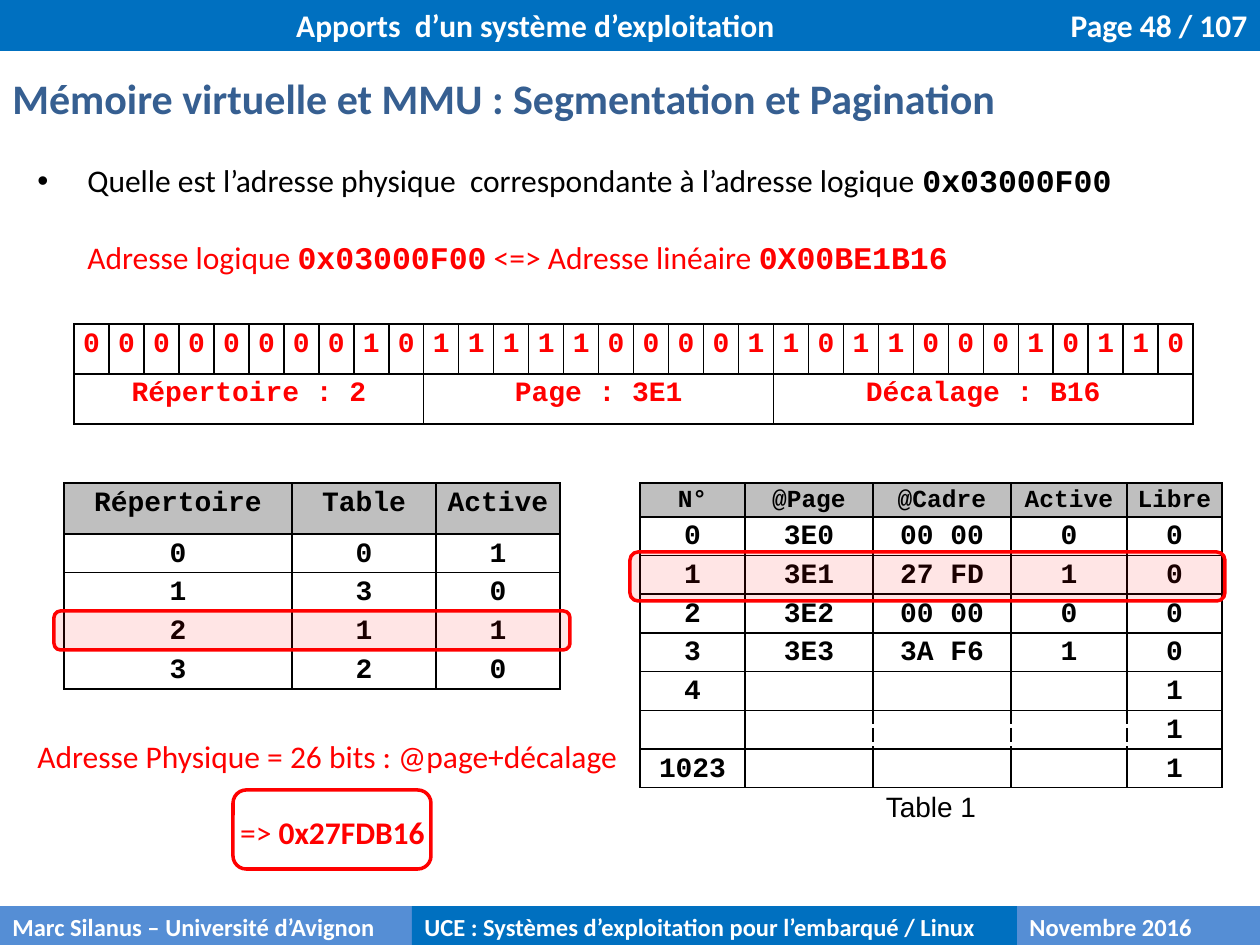
"""Build the slide on virtual memory, segmentation and paging."""
from lxml import etree
from pptx import Presentation
from pptx import util as u
from pptx.dml.color import RGBColor
from pptx.enum import shapes, text
from pptx.oxml import ns

BLACK = RGBColor(0x00, 0x00, 0x00)
WHITE = RGBColor(0xFF, 0xFF, 0xFF)
RED = RGBColor(0xFF, 0x00, 0x00)
GREY = RGBColor(0xBF, 0xBF, 0xBF)
BLUE = RGBColor(0x00, 0x70, 0xC0)
LIGHT_BLUE = RGBColor(0x55, 0x8E, 0xD5)
TITLE_BLUE = RGBColor(0x36, 0x5F, 0x91)
SANS, MONO, CAPTION = "Calibri", "Courier New", "Arial"
LEFT, CENTER, RIGHT = text.PP_ALIGN.LEFT, text.PP_ALIGN.CENTER, text.PP_ALIGN.RIGHT
BLANK_LINE = u.Pt(22)

BITS = "00000000101111100001101100010110"
FIELDS = [("Répertoire : 2", 10), ("Page : 3E1", 10), ("Décalage : B16", 12)]
DIRECTORY = [
    ["Répertoire", "Table", "Active"],
    ["0", "0", "1"],
    ["1", "3", "0"],
    ["2", "1", "1"],
    ["3", "2", "0"],
]
PAGES = [
    ["N°", "@Page", "@Cadre", "Active", "Libre"],
    ["0", "3E0", "00 00", "0", "0"],
    ["1", "3E1", "27 FD", "1", "0"],
    ["2", "3E2", "00 00", "0", "0"],
    ["3", "3E3", "3A F6", "1", "0"],
    ["4", "", "", "", "1"],
    ["", "", "", "", "1"],
    ["1023", "", "", "", "1"],
    ["Table 1", "", "", "", ""],
]


def px(length):
    return u.Emu(round(length * 914400 / 126))


def set_font(font, size, color, bold=None, name=None):
    font.size = u.Pt(size)
    font.color.rgb = color
    font.bold = bold
    font.name = name


def add_bar(slide, box, words, size, color, align=LEFT):
    bar = slide.shapes.add_shape(shapes.MSO_SHAPE.RECTANGLE, *map(px, box))
    bar.shadow.inherit = False
    bar.fill.solid()
    bar.fill.fore_color.rgb = color
    bar.line.fill.background()
    bar.text_frame.vertical_anchor = text.MSO_ANCHOR.TOP
    paragraph = bar.text_frame.paragraphs[0]
    paragraph.text = words
    paragraph.alignment = align
    set_font(paragraph.font, size, WHITE, True, SANS)


def add_text(slide, box, lines, size, wrap=True, anchor=text.MSO_ANCHOR.TOP):
    """Add a text box; each line is (runs, color, alignment, indent, bullet)."""
    frame = slide.shapes.add_textbox(*map(px, box)).text_frame
    frame.word_wrap = wrap
    frame.vertical_anchor = anchor
    for index, (runs, color, align, indent, bullet) in enumerate(lines):
        paragraph = frame.add_paragraph() if index else frame.paragraphs[0]
        paragraph.alignment = align
        if index:
            paragraph.space_before = BLANK_LINE
        if indent:
            properties = paragraph._p.get_or_add_pPr()
            properties.set("marL", str(px(indent)))
            properties.set("indent", str(-px(indent) if bullet else 0))
            if bullet:
                etree.SubElement(properties, ns.qn("a:buFont"), typeface="Arial")
                etree.SubElement(properties, ns.qn("a:buChar"), char=bullet)
        set_font(paragraph.font, size, color)
        for words, name, bold in runs:
            run = paragraph.add_run()
            run.text = words
            run.font.name = name
            run.font.bold = bold


def set_borders(cell, dashed="", hidden=""):
    properties = cell._tc.get_or_add_tcPr()
    for side in "LRTB":
        line = etree.SubElement(properties, ns.qn(f"a:ln{side}"), w=str(u.Pt(1)))
        if side in hidden:
            etree.SubElement(line, ns.qn("a:noFill"))
            continue
        fill = etree.SubElement(line, ns.qn("a:solidFill"))
        etree.SubElement(fill, ns.qn("a:srgbClr"), val=str(BLACK))
        dash = "dash" if side in dashed else "solid"
        etree.SubElement(line, ns.qn("a:prstDash"), val=dash)


def fill_cell(cell, words, size, color, shade=None, bold=True, name=MONO):
    cell.margin_left = cell.margin_right = px(9)
    cell.margin_top = cell.margin_bottom = 0
    if shade:
        cell.fill.solid()
        cell.fill.fore_color.rgb = shade
    else:
        cell.fill.background()
    paragraph = cell.text_frame.paragraphs[0]
    paragraph.text = words
    paragraph.alignment = CENTER
    paragraph.line_spacing = 1.15
    set_font(paragraph.font, size, color, bold, name)


def add_grid(slide, left, top, widths, heights):
    frame = slide.shapes.add_table(
        len(heights), len(widths), px(left), px(top), px(sum(widths)), px(sum(heights)))
    table = frame.table
    table.first_row = table.horz_banding = False
    for column, width in zip(table.columns, widths):
        column.width = px(width)
    for row, height in zip(table.rows, heights):
        row.height = px(height)
    return table


def add_address_table(slide):
    table = add_grid(slide, 74, 324, [35] * len(BITS), [50, 50])
    for cell in table.iter_cells():
        set_borders(cell)
    for column, bit in enumerate(BITS):
        fill_cell(table.cell(0, column), bit, 16, RED)
    start = 0
    for words, span in FIELDS:
        table.cell(1, start).merge(table.cell(1, start + span - 1))
        fill_cell(table.cell(1, start), words, 16, RED)
        start += span


def add_directory_table(slide):
    table = add_grid(slide, 64, 483, [228, 144, 124], [51] + [155 / 4] * 4)
    for row, values in enumerate(DIRECTORY):
        for column, words in enumerate(values):
            set_borders(table.cell(row, column))
            fill_cell(table.cell(row, column), words, 16, BLACK, None if row else GREY)


def add_page_table(slide):
    table = add_grid(slide, 640, 483, [105, 128, 138, 116, 95], [33] + [271 / 7] * 7 + [39])
    gap_row, caption_row = 6, len(PAGES) - 1
    for row, values in enumerate(PAGES):
        for column, words in enumerate(values):
            cell = table.cell(row, column)
            dashed = ("L" if column > 1 else "") + ("R" if 0 < column < 4 else "")
            set_borders(cell, dashed if row == gap_row else "",
                        "LRB" if row == caption_row else "")
            style = (16, BLACK) if row else (14, BLACK, GREY)
            fill_cell(cell, words, *style)
    caption = table.cell(caption_row, 0)
    caption.merge(table.cell(caption_row, 4))
    fill_cell(caption, PAGES[-1][0], 16, BLACK, bold=False, name=CAPTION)


def add_highlight(slide, box, tinted=True):
    frame = slide.shapes.add_shape(shapes.MSO_SHAPE.ROUNDED_RECTANGLE, *map(px, box))
    frame.shadow.inherit = False
    frame.line.color.rgb = RED
    frame.line.width = u.Pt(2)
    if tinted:
        frame.fill.solid()
        frame.fill.fore_color.rgb = RED
        color = frame.fill._xPr.find(ns.qn("a:solidFill"))[0]
        etree.SubElement(color, ns.qn("a:alpha"), val="10000")
    else:
        frame.fill.background()


def main():
    presentation = Presentation()
    presentation.slide_width, presentation.slide_height = px(1260), px(945)
    slide = presentation.slides.add_slide(presentation.slide_layouts[6])

    add_bar(slide, (963, 0, 297, 51), "Page 48 / 107", 18, BLUE, RIGHT)
    add_bar(slide, (0, 0, 1071, 51), "Apports  d’un système d’exploitation", 18, BLUE, CENTER)
    title = [("Mémoire virtuelle et MMU : Segmentation et Pagination", SANS, True)]
    add_text(slide, (0, 66, 1260, 63), [(title, TITLE_BLUE, LEFT, 0, "")], 24)
    add_bar(slide, (0, 906, 412, 43), "Marc Silanus – Université d’Avignon", 14, LIGHT_BLUE)
    add_bar(slide, (1017, 906, 243, 43), "Novembre 2016", 14, LIGHT_BLUE)
    add_bar(slide, (412, 906, 605, 43),
            "UCE : Systèmes d’exploitation pour l’embarqué / Linux", 14, BLUE)

    question = [("Quelle est l’adresse physique  correspondante à l’adresse logique ", SANS, False),
                ("0x03000F00", MONO, True)]
    answer = [("Adresse logique ", SANS, False), ("0x03000F00", MONO, True),
              (" <=> Adresse linéaire ", SANS, False), ("0X00BE1B16", MONO, True)]
    add_text(slide, (25, 155, 1111, 127),
             [(question, BLACK, LEFT, 50, "•"), (answer, RED, LEFT, 50, "")],
             18, False, text.MSO_ANCHOR.MIDDLE)

    add_address_table(slide)
    add_directory_table(slide)
    add_highlight(slide, (54, 611, 516, 39))
    add_page_table(slide)
    add_highlight(slide, (630, 552, 595, 49))

    physical = [("Adresse Physique = 26 bits : @page+décalage", SANS, False)]
    result = [("=> ", SANS, False), ("0x27FDB16", SANS, True)]
    add_text(slide, (25, 731, 615, 127),
             [(physical, RED, LEFT, 0, ""), (result, RED, CENTER, 0, "")], 18)
    add_highlight(slide, (233, 790, 198, 79), False)
    presentation.save("out.pptx")


if __name__ == "__main__":
    main()
